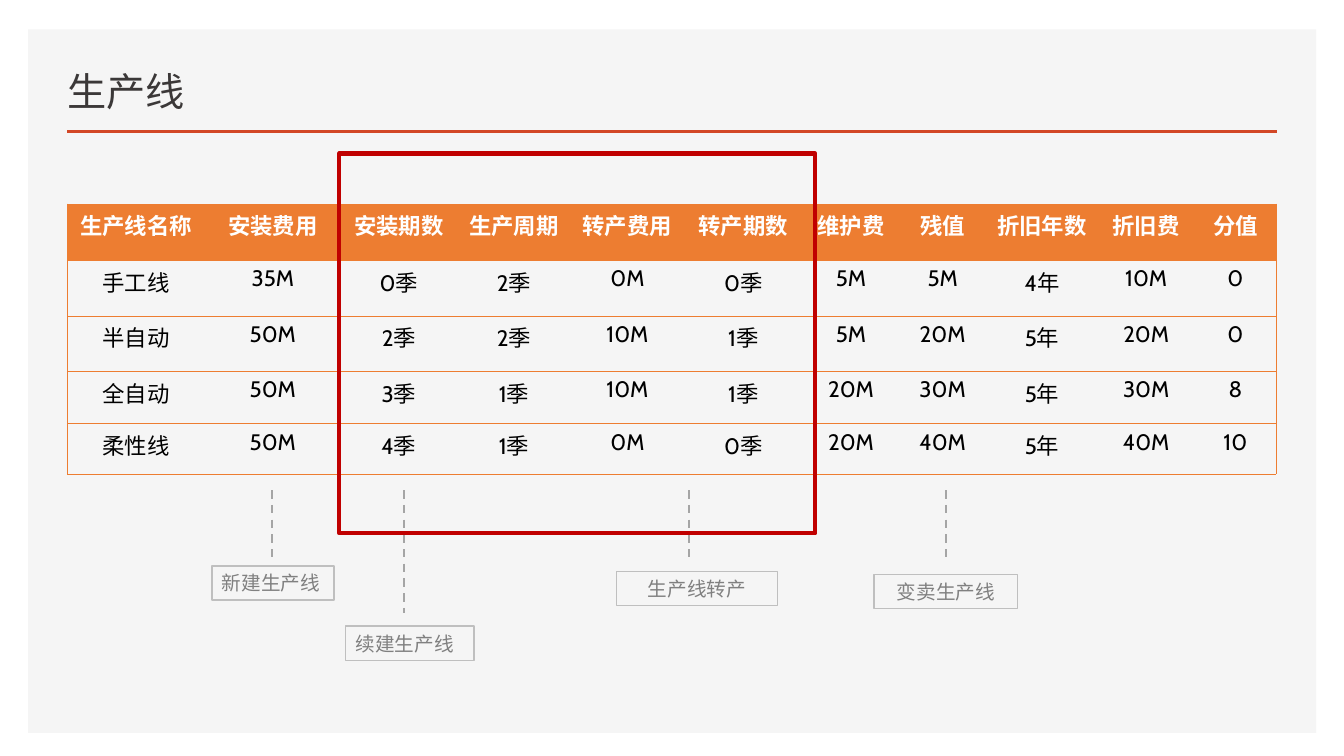
from lxml import etree
from pptx import Presentation
from pptx.dml.color import RGBColor
from pptx.enum.dml import MSO_LINE
from pptx.enum.shapes import MSO_CONNECTOR, MSO_SHAPE
from pptx.enum.text import MSO_ANCHOR, PP_ALIGN
from pptx.oxml.ns import qn
from pptx.util import Cm, Pt

RECTANGLE = MSO_SHAPE.RECTANGLE
STRAIGHT = MSO_CONNECTOR.STRAIGHT
DASH = MSO_LINE.DASH
LEFT, CENTER = PP_ALIGN.LEFT, PP_ALIGN.CENTER
BOTTOM, MIDDLE = MSO_ANCHOR.BOTTOM, MSO_ANCHOR.MIDDLE

LATIN_FONT, CHINESE_FONT = "Cabin", "Noto Sans CJK SC"
COLORS = {
    "panel": "F5F5F5", "rule": "D24726", "title": "3B3838",
    "orange": "ED7D31", "white": "FFFFFF", "black": "000000",
    "dash": "A5A5A5", "label_line": "BFBFBF", "label_text": "808080",
    "highlight": "C00000",
}

COLUMN_WIDTHS = [3.45, 3.45, 2.9, 2.9, 2.82, 3.02, 2.41, 2.21, 2.8, 2.45, 2.05]
ROW_HEIGHTS = [1.42, 1.4, 1.4, 1.32, 1.27]
ROWS = [
    ["生产线名称", "安装费用", "安装期数", "生产周期", "转产费用", "转产期数",
     "维护费", "残值", "折旧年数", "折旧费", "分值"],
    ["手工线", "35M", "0季", "2季", "0M", "0季", "5M", "5M", "4年", "10M", "0"],
    ["半自动", "50M", "2季", "2季", "10M", "1季", "5M", "20M", "5年", "20M", "0"],
    ["全自动", "50M", "3季", "1季", "10M", "1季", "20M", "30M", "5年", "30M", "8"],
    ["柔性线", "50M", "4季", "1季", "0M", "0季", "20M", "40M", "5年", "40M", "10"],
]
# Text, label box (left, top, width), alignment, dashed line (x, bottom)
CALLOUTS = [
    ("新建生产线", (5.34, 14.26, 3.08), LEFT, (6.86, 14.1)),
    ("续建生产线", (8.71, 15.78, 3.24), LEFT, (10.18, 15.45)),
    ("生产线转产", (15.54, 14.4, 4.05), CENTER, (17.37, 14.1)),
    ("变卖生产线", (22.03, 14.47, 3.62), CENTER, (23.83, 14.1)),
]
CALLOUT_TOP, LABEL_HEIGHT = 12.35, 0.86


def rgb(name):
    return RGBColor.from_string(COLORS[name])


def write(frame, text, size, color, align=LEFT, bold=False, latin=LATIN_FONT):
    frame.text = text
    para = frame.paragraphs[0]
    para.alignment = align
    span = para.runs[0]
    span.font.size, span.font.bold = Pt(size), bold
    span.font.name = latin
    span.font.color.rgb = rgb(color)
    east_asian = etree.SubElement(span.font._element, qn("a:ea"))
    east_asian.set("typeface", CHINESE_FONT)


def add_box(page, left, top, width, height, fill=None, line=None, weight=1):
    box = page.shapes.add_shape(RECTANGLE, Cm(left), Cm(top), Cm(width), Cm(height))
    box.shadow.inherit = False
    if fill:
        box.fill.solid()
        box.fill.fore_color.rgb = rgb(fill)
    else:
        box.fill.background()
    if line:
        box.line.color.rgb = rgb(line)
        box.line.width = Pt(weight)
    else:
        box.line.fill.background()
    return box


def add_line(page, start, end, color, weight, dash=None):
    line = page.shapes.add_connector(STRAIGHT, *(Cm(value) for value in (*start, *end)))
    line.line.color.rgb = rgb(color)
    line.line.width = Pt(weight)
    if dash:
        line.line.dash_style = dash
    etree.SubElement(line._element.spPr, qn("a:effectLst"))


def set_borders(cell, sides):
    properties = cell._tc.get_or_add_tcPr()
    for index, side in enumerate("LRTB"):
        border = etree.Element(qn(f"a:ln{side}"), w=str(Pt(0.5)))
        properties.insert(index, border)
        if side in sides:
            fill = etree.SubElement(border, qn("a:solidFill"))
            etree.SubElement(fill, qn("a:srgbClr"), val=COLORS["orange"])
        else:
            etree.SubElement(border, qn("a:noFill"))


def add_header(page, left, top, width, height):
    title = page.shapes.add_textbox(Cm(left), Cm(top), Cm(width), Cm(height))
    frame = title.text_frame
    frame.word_wrap = True
    frame.margin_left = 0
    frame.vertical_anchor = BOTTOM
    write(frame, "生产线", 28, "title", latin=CHINESE_FONT)
    rule_y = top + height + 0.3
    add_line(page, (left, rule_y), (left + width, rule_y), "rule", 2)


def add_cost_table(page, left, top):
    table = page.shapes.add_table(
        len(ROWS), len(COLUMN_WIDTHS), Cm(left), Cm(top),
        Cm(sum(COLUMN_WIDTHS)), Cm(sum(ROW_HEIGHTS))).table
    table.horz_banding = False
    for column, width in zip(table.columns, COLUMN_WIDTHS):
        column.width = Cm(width)
    for row_index, (row, height) in enumerate(zip(table.rows, ROW_HEIGHTS)):
        row.height = Cm(height)
        is_header = row_index == 0
        for column_index, text in enumerate(ROWS[row_index]):
            cell = table.cell(row_index, column_index)
            sides = "TB"
            if column_index == 0:
                sides += "L"
            if column_index == len(COLUMN_WIDTHS) - 1:
                sides += "R"
            set_borders(cell, sides)
            if is_header:
                cell.fill.solid()
                cell.fill.fore_color.rgb = rgb("orange")
            else:
                cell.fill.background()
            write(cell.text_frame, text, 16, "white" if is_header else "black",
                  CENTER, is_header)


def add_callout(page, text, label_box, align, dashed_line):
    x, bottom = dashed_line
    add_line(page, (x, CALLOUT_TOP), (x, bottom), "dash", 1.5, DASH)
    label = add_box(page, *label_box, LABEL_HEIGHT, line="label_line")
    frame = label.text_frame
    frame.word_wrap = True
    frame.vertical_anchor = MIDDLE
    write(frame, text, 14, "label_text", align)


def build_page(page):
    # Background panel and title
    add_box(page, 0.71, 0.74, 32.46, 17.73, fill="panel")
    add_header(page, 1.7, 1.24, 30.48, 1.78)
    # Production line costs
    add_cost_table(page, 1.7, 5.14)
    # Notes under the table
    for callout in CALLOUTS:
        add_callout(page, *callout)
    # Frame around the highlighted columns
    add_box(page, 8.55, 3.87, 12.0, 9.57, line="highlight", weight=3)


def main():
    deck = Presentation()
    deck.slide_width, deck.slide_height = Cm(33.87), Cm(19.05)
    build_page(deck.slides.add_slide(deck.slide_layouts[6]))
    deck.save("out.pptx")


if __name__ == "__main__":
    main()
